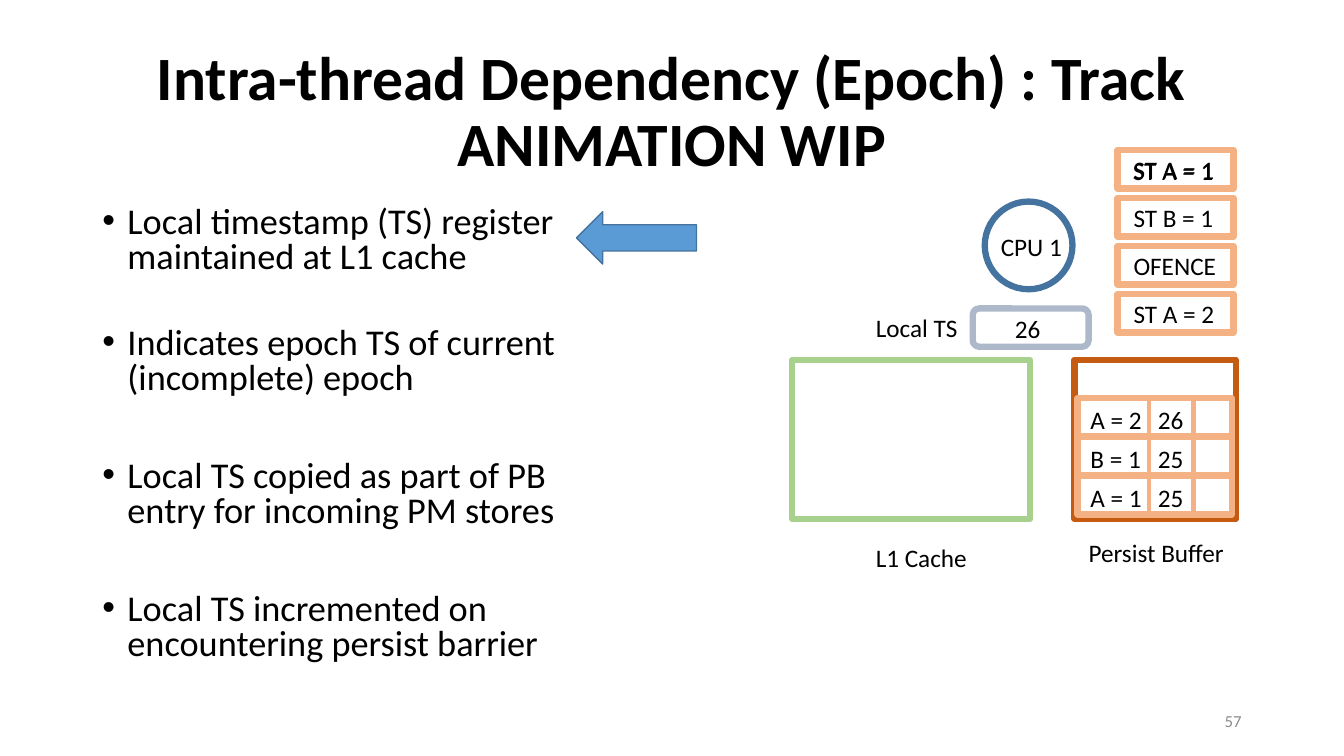
from lxml import etree
from pptx import Presentation, util as u
from pptx.dml.color import RGBColor
from pptx.enum import shapes, text
from pptx.oxml.ns import qn

SHAPE, ALIGN, ANCHOR = shapes.MSO_SHAPE, text.PP_ALIGN, text.MSO_ANCHOR
WIDTH, HEIGHT = u.Inches(13.333), u.Inches(7.5)
COLS, ROWS = 80, 45
BLACK, WHITE, PEACH, BLUE = "000000", "FFFFFF", "F4B183", "43739E"


def rgb(code):
    return RGBColor.from_string(code)


def assign(target, values):
    for name, value in values.items():
        setattr(target, name, value)


class Board:
    """Draws on one slide; all places are columns and rows of an 80 by 45 grid."""

    font = "Calibri"

    def __init__(self, prs):
        self.s = prs.slides.add_slide(prs.slide_layouts[5])

    def x(self, cols):
        return round(WIDTH * cols / COLS)

    def y(self, rows):
        return round(HEIGHT * rows / ROWS)

    def box(self, left, top, width, height):
        return self.x(left), self.y(top), self.x(width), self.y(height)

    def fill_text(self, tf, lines, size, color=BLACK, bold=False, anchor=ANCHOR.TOP, **para):
        assign(tf, {"word_wrap": True, "auto_size": text.MSO_AUTO_SIZE.NONE,
                    "vertical_anchor": anchor})
        tf.text = "\n".join(lines)
        for p in tf.paragraphs:
            assign(p, para)
            for r in p.runs:
                assign(r.font, {"name": self.font, "size": u.Pt(size), "bold": bold})
                r.font.color.rgb = rgb(color)
        return tf.paragraphs

    def title(self, place, words):
        sp = self.s.shapes.title
        assign(sp, dict(zip(("left", "top", "width", "height"), self.box(*place))))
        self.fill_text(sp.text_frame, [words], 44, bold=True, anchor=ANCHOR.MIDDLE,
                       alignment=ALIGN.CENTER, line_spacing=0.9)

    def label(self, left, top, width, words, size=18, **style):
        tf = self.s.shapes.add_textbox(*self.box(left, top, width, 2.4)).text_frame
        return self.fill_text(tf, [words], size, **style)

    def bullets(self, place, items):
        """Items are pairs of wording and the space before it in points."""
        tf = self.s.shapes.add_textbox(*self.box(*place)).text_frame
        paragraphs = self.fill_text(tf, [words for words, _ in items], 25.9, line_spacing=0.8)
        for p, (_, before) in zip(paragraphs, items):
            p.space_before = u.Pt(before)
            pPr = p._p.get_or_add_pPr()
            pPr.set("marL", str(u.Inches(0.25)))
            pPr.set("indent", str(-u.Inches(0.25)))
            etree.SubElement(pPr, qn("a:buFont")).set("typeface", "Arial")
            etree.SubElement(pPr, qn("a:buChar")).set("char", "•")

    def shape(self, kind, place, line, weight=4.5, fill=WHITE):
        sp = self.s.shapes.add_shape(kind, *self.box(*place))
        sp.shadow.inherit = False
        sp.fill.solid()
        sp.fill.fore_color.rgb = rgb(fill)
        sp.line.color.rgb = rgb(line)
        sp.line.width = u.Pt(weight)

    def divider(self, col, top, height):
        line = self.s.shapes.add_connector(
            shapes.MSO_CONNECTOR.STRAIGHT,
            self.x(col), self.y(top), self.x(col), self.y(top + height))
        line.line.color.rgb = rgb(PEACH)
        line.line.width = u.Pt(3)
        etree.SubElement(line._element.spPr, qn("a:effectLst"))

    def instruction(self, top, words):
        self.shape(SHAPE.RECTANGLE, (66.52, top, 6.9, 2.28), PEACH)
        self.label(66.88, top - 0.06, 7.26, words)

    def buffer_entry(self, top, store, timestamp):
        self.shape(SHAPE.RECTANGLE, (64.14, top, 9.18, 2.28), PEACH)
        p = self.label(64.32, top + 0.08, 9.6, f"{store}\t{timestamp}")[0]
        tabs = etree.SubElement(p._p.get_or_add_pPr(), qn("a:tabLst"))
        tab = etree.SubElement(tabs, qn("a:tab"))
        tab.set("pos", str(u.Inches(0.67)))
        tab.set("algn", "l")
        self.divider(68.4, top - 0.06, 2.34)
        self.divider(71.04, top + 0.08, 2.34)


def main():
    prs = Presentation()
    prs.slide_width, prs.slide_height = WIDTH, HEIGHT
    b = Board(prs)
    b.title((5.5, 2.4, 69, 8.7), "Intra-thread Dependency (Epoch) : Track\vANIMATION WIP")
    b.bullets((5.5, 12, 30, 28.56), [
        ("Local timestamp (TS) register maintained at L1 cache", 10),
        ("Indicates epoch TS of current (incomplete) epoch", 36.7),
        ("Local TS copied as part of PB entry for incoming PM stores", 45.3),
        ("Local TS incremented on encountering persist barrier", 45.3),
    ])
    b.label(56.5, 41.7, 18, "57", size=12, color="8C8C8C",
            anchor=ANCHOR.MIDDLE, alignment=ALIGN.RIGHT)

    b.shape(SHAPE.OVAL, (58.62, 12, 5.22, 5.22), BLUE)
    b.label(58.98, 13.5, 5.22, "CPU 1")
    b.shape(SHAPE.RECTANGLE, (47.16, 21.42, 14.16, 9.48), "A9D18E")
    b.label(51, 31.98, 7.68, "L1 Cache", alignment=ALIGN.CENTER)
    b.shape(SHAPE.ROUNDED_RECTANGLE, (57.9, 18.36, 6.9, 2.28), "ADB9CA")
    b.label(51.54, 18.3, 6.3, "Local TS")
    b.label(59.82, 18.36, 6.12, "26")

    b.shape(SHAPE.RECTANGLE, (63.96, 21.42, 9.6, 9.48), "C55A11")
    b.label(63.9, 31.68, 9.84, "Persist Buffer", alignment=ALIGN.CENTER)
    entries = [("A = 2", 26), ("B = 1", 25), ("A = 1", 25)]
    for i, (store, timestamp) in reversed(list(enumerate(entries))):
        b.buffer_entry(23.7 + 2.32 * i, store, timestamp)

    for i, words in enumerate(["ST A = 1", "ST B = 1", "OFENCE", "ST A = 2"]):
        b.instruction(8.94 + 2.86 * i, words)
    b.label(66.84, 8.94, 6.42, "ST A = 1")
    b.shape(SHAPE.LEFT_ARROW, (34.32, 12.6, 7.14, 3.12), BLUE, 1, "5B9BD5")
    prs.save("out.pptx")


if __name__ == "__main__":
    main()
